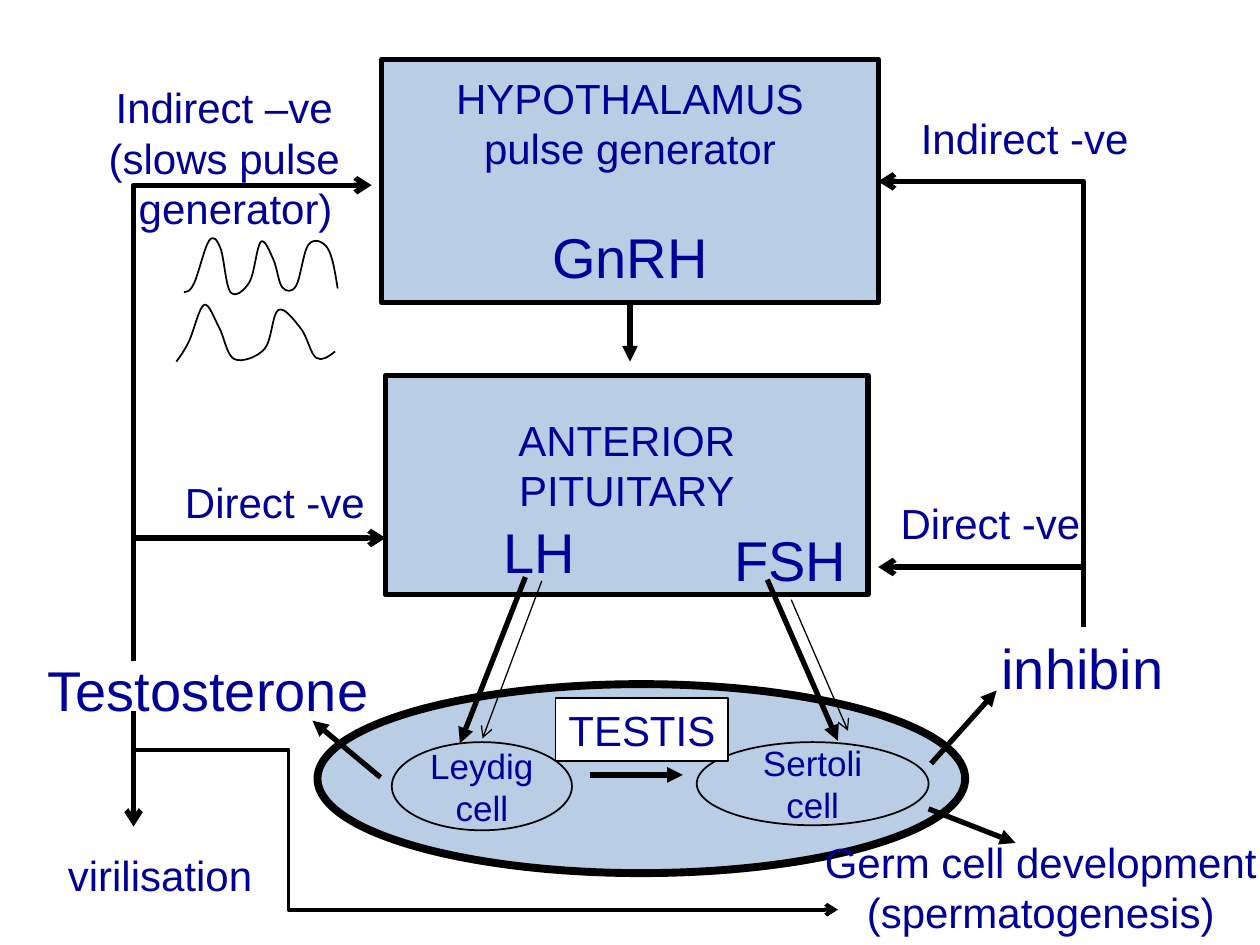
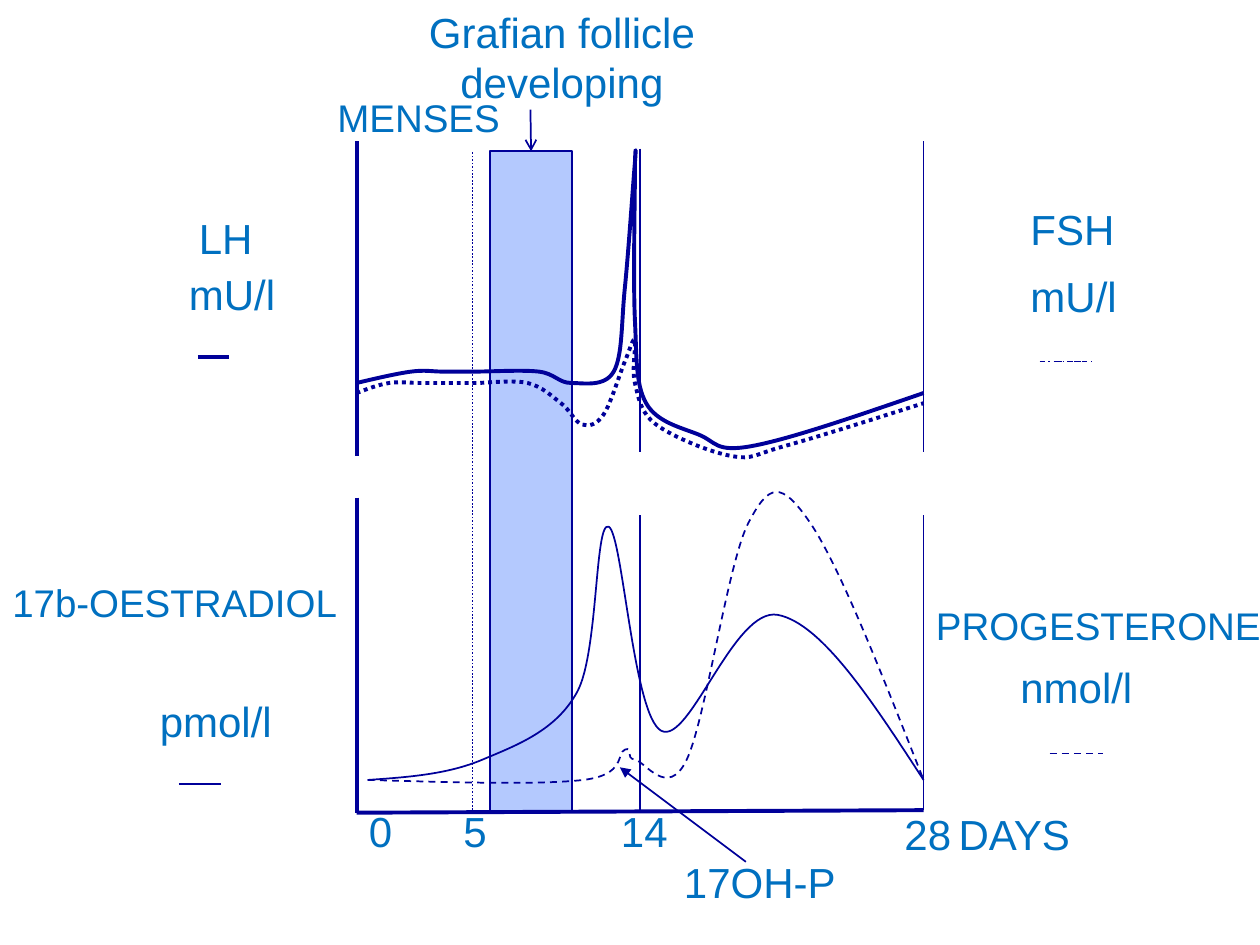
from dataclasses import dataclass
from typing import Optional

from lxml import etree
from pptx import Presentation
from pptx.dml.color import RGBColor
from pptx.enum.dml import MSO_LINE as Dash
from pptx.enum.shapes import MSO_CONNECTOR as Link, MSO_SHAPE as Preset
from pptx.enum.text import MSO_ANCHOR as Anchor, MSO_AUTO_SIZE as AutoSize, PP_ALIGN as Align
from pptx.oxml.ns import qn
from pptx.util import Inches, Pt

Point = tuple[float, float]

COLORS = {
    "organ": "B9CDE5",
    "ink": "000099",
    "caption": "0070C0",
    "outline": "000000",
    "window": "B4C9FE",
    "white": "FFFFFF",
}
FONT = "Arial"
LINE_SPACING = 1.2
TEXT_INSET = 0.05
HEAVY, MEDIUM, THIN, HAIR = 3, 2.25, 1, 0.75


@dataclass
class Label:
    text: str
    left: float
    top: float
    width: float
    size: float = 24
    align: Align = Align.LEFT
    color: str = "ink"


@dataclass
class Block:
    preset: Preset
    left: float
    top: float
    width: float
    height: float
    weight: float
    fill: Optional[str] = None
    text: str = ""
    size: float = 24
    line: str = "outline"


@dataclass
class Stroke:
    start: Point
    end: Point
    weight: float = HEAVY
    tip: Optional[str] = None
    dash: Optional[Dash] = None
    bend: Optional[float] = None
    color: str = "outline"


@dataclass
class Curve:
    """A smooth line that passes through every point."""
    points: list[Point]
    weight: float = THIN
    dash: Optional[Dash] = None
    color: str = "ink"


@dataclass
class CyclePlot:
    """Turns a cycle day and a level above the baseline into a place on the slide."""
    baseline: float
    left: float = 2.83
    width: float = 4.5
    days: int = 28

    def x(self, day: float) -> float:
        return self.left + self.width * day / self.days

    def place(self, levels: list[Point]) -> list[Point]:
        return [(self.x(day), self.baseline - level) for day, level in levels]


def rgb(name: str) -> RGBColor:
    return RGBColor.from_string(COLORS[name])


def style_line(line, color: str, weight: float, dash: Optional[Dash] = None) -> None:
    line.color.rgb = rgb(color)
    line.width = Pt(weight)
    if dash is not None:
        line.dash_style = dash


def write_lines(frame, text: str, size: float, color: str, align: Align) -> None:
    frame.word_wrap = False
    frame.text = text
    for paragraph in frame.paragraphs:
        paragraph.alignment = align
        paragraph.font.name = FONT
        paragraph.font.size = Pt(size)
        paragraph.font.color.rgb = rgb(color)


def add_label(slide, label: Label):
    line_count = label.text.count("\n") + 1
    height = 2 * TEXT_INSET + line_count * label.size * LINE_SPACING / 72
    box = slide.shapes.add_textbox(
        Inches(label.left), Inches(label.top), Inches(label.width), Inches(height))
    write_lines(box.text_frame, label.text, label.size, label.color, label.align)
    box.text_frame.auto_size = AutoSize.SHAPE_TO_FIT_TEXT
    return box


def add_block(slide, block: Block):
    shape = slide.shapes.add_shape(
        block.preset, Inches(block.left), Inches(block.top),
        Inches(block.width), Inches(block.height))
    shape.shadow.inherit = False
    if block.fill:
        shape.fill.solid()
        shape.fill.fore_color.rgb = rgb(block.fill)
    else:
        shape.fill.background()
    style_line(shape.line, block.line, block.weight)
    if block.text:
        write_lines(shape.text_frame, block.text, block.size, "ink", Align.CENTER)
        shape.text_frame.vertical_anchor = Anchor.MIDDLE
    return shape


def add_stroke(slide, stroke: Stroke):
    """Draw a straight line, or an elbow that turns at the share of its width in bend."""
    kind = Link.STRAIGHT if stroke.bend is None else Link.ELBOW
    connector = slide.shapes.add_connector(
        kind, *(Inches(value) for value in stroke.start + stroke.end))
    style_line(connector.line, stroke.color, stroke.weight, stroke.dash)
    properties = connector.element.spPr
    if stroke.tip:
        etree.SubElement(properties.find(qn("a:ln")), qn("a:tailEnd"), type=stroke.tip)
    if stroke.bend is not None:
        guides = next(properties.iter(qn("a:avLst")))
        etree.SubElement(guides, qn("a:gd"), name="adj1",
                         fmla=f"val {round(stroke.bend * 100000)}")
    etree.SubElement(properties, qn("a:effectLst"))
    return connector


def midpoint(a: Point, b: Point) -> Point:
    return (a[0] + b[0]) / 2, (a[1] + b[1]) / 2


def bezier_points(points: list[Point]) -> list[Point]:
    """Put two control points before each later point (a Catmull-Rom spline).

    At an inner point the curve runs parallel to the line between its neighbours.
    """
    arriving, leaving = {}, {}
    for i in range(1, len(points) - 1):
        (x, y), before, after = points[i], points[i - 1], points[i + 1]
        dx, dy = (after[0] - before[0]) / 6, (after[1] - before[1]) / 6
        arriving[i], leaving[i] = (x - dx, y - dy), (x + dx, y + dy)
    last = len(points) - 1
    leaving[0] = midpoint(points[0], arriving[1])
    arriving[last] = midpoint(points[last], leaving[last - 1])

    result = [points[0]]
    for i in range(1, len(points)):
        result += [leaving[i - 1], arriving[i], points[i]]
    return result


def add_curve(slide, curve: Curve):
    """Draw a freeform and turn each three of its straight steps into one Bézier step."""
    start, *rest = [(Inches(x), Inches(y)) for x, y in bezier_points(curve.points)]
    builder = slide.shapes.build_freeform(*start)
    builder.add_line_segments(rest, close=False)
    shape = builder.convert_to_shape()
    shape.shadow.inherit = False
    shape.fill.background()
    style_line(shape.line, curve.color, curve.weight, curve.dash)
    steps = list(shape.element.iter(qn("a:lnTo")))
    outline = steps[0].getparent()
    for first in range(0, len(steps), 3):
        cubic = etree.SubElement(outline, qn("a:cubicBezTo"))
        for step in steps[first:first + 3]:
            cubic.append(step[0])
            outline.remove(step)
    return shape


def add_organs(slide) -> None:
    for block in (
        Block(Preset.OVAL, 2.52, 5.43, 5.14, 1.5, 4.5, "organ"),
        Block(Preset.OVAL, 3.11, 5.89, 1.43, 0.7, THIN, None, "Leydig\ncell", 20),
        Block(Preset.OVAL, 5.53, 5.89, 1.84, 0.66, THIN, None, "Sertoli\ncell", 20),
        Block(Preset.RECTANGLE, 4.41, 5.54, 1.37, 0.5, THIN, "white", "TESTIS"),
    ):
        add_block(slide, block)

    hypothalamus = add_block(slide, Block(
        Preset.RECTANGLE, 3.03, 0.47, 3.94, 1.93, HEAVY, "organ",
        "HYPOTHALAMUS\npulse generator\nGnRH"))
    gnrh = hypothalamus.text_frame.paragraphs[-1]
    gnrh.font.size = Pt(32)
    gnrh.space_before = Pt(28)
    gnrh_release = add_stroke(slide, Stroke((5, 2.4), (5, 2.87), tip="triangle"))
    gnrh_release.begin_connect(hypothalamus, 2)

    pituitary = add_block(slide, Block(
        Preset.RECTANGLE, 3.06, 2.98, 3.83, 1.74, HEAVY, "organ", "ANTERIOR\nPITUITARY"))
    pituitary.text_frame.margin_bottom = Inches(0.37)


def add_hormone_routes(slide) -> None:
    testosterone_x, inhibin_x = 1.06, 8.6
    hypothalamus_right = 6.97
    actions = {
        "Leydig to Sertoli": ((4.68, 6.15), (5.42, 6.15)),
        "LH to Leydig": ((4.17, 4.58), (3.65, 5.9)),
        "FSH to Sertoli": ((6.09, 4.6), (6.65, 5.88)),
        "Leydig to testosterone": ((3.02, 6.17), (2.48, 5.72)),
        "Sertoli to inhibin": ((7.39, 6.06), (7.91, 5.48)),
        "Sertoli to germ cells": ((7.37, 6.42), (8.06, 6.69)),
    }
    for start, end in actions.values():
        add_stroke(slide, Stroke(start, end, tip="triangle"))

    indirect_feedback = [
        Stroke((testosterone_x, 5.25), (2.95, 1.47), bend=0),
        Stroke((inhibin_x, 4.98), (hypothalamus_right, 1.44), bend=0),
    ]
    direct_feedback = [
        Stroke((testosterone_x, 4.27), (3.06, 4.27)),
        Stroke((inhibin_x, 4.5), (hypothalamus_right, 4.5)),
    ]
    testosterone_effects = [
        Stroke((testosterone_x, 5.64), (testosterone_x, 6.56)),
        Stroke((testosterone_x, 5.95), (6.65, 7.22), MEDIUM, bend=0.22),
    ]
    side_arrows = [
        Stroke((4.3, 4.61), (3.83, 5.86), HAIR),
        Stroke((6.28, 4.76), (6.73, 5.8), HAIR),
    ]
    for stroke in indirect_feedback + direct_feedback + testosterone_effects + side_arrows:
        stroke.tip = "arrow"
        add_stroke(slide, stroke)


def build_feedback(slide) -> None:
    add_organs(slide)
    add_hormone_routes(slide)

    for label in (
        Label("Testosterone", 0.28, 5.15, 2.77, 32),
        Label("inhibin", 7.85, 4.98, 1.5, 32),
        Label("LH", 3.9, 4.06, 0.78, 32),
        Label("FSH", 5.73, 4.12, 1.1, 32),
        Label("Direct -ve", 1.37, 3.73, 1.64),
        Label("Direct -ve", 7.05, 3.9, 1.64),
        Label("Indirect -ve", 7.21, 0.84, 1.87),
        Label("virilisation", 0.44, 6.69, 1.67),
        Label("Germ cell development\n(spermatogenesis)", 6.43, 6.59, 3.66,
              align=Align.CENTER),
    ):
        add_label(slide, label)
    slowing = add_label(slide, Label(
        "Indirect –ve\n(slows pulse\ngenerator)", 0.75, 0.6, 2.06, align=Align.CENTER))
    slowing.text_frame.paragraphs[-1]._p.get_or_add_pPr().set("marL", str(Pt(13)))

    fast_pulses = [(1.46, 2.32), (1.54, 2.25), (1.66, 1.91), (1.75, 1.97), (1.83, 2.32),
                   (1.98, 2.24), (2.07, 1.92), (2.17, 2.06), (2.24, 2.28), (2.35, 2.27),
                   (2.45, 1.94), (2.6, 1.97), (2.68, 2.29)]
    slow_pulses = [(1.4, 2.87), (1.5, 2.71), (1.62, 2.42), (1.74, 2.6), (1.86, 2.85),
                   (2.1, 2.77), (2.21, 2.46), (2.39, 2.61), (2.51, 2.84), (2.66, 2.79)]
    for pulses in (fast_pulses, slow_pulses):
        add_curve(slide, Curve(pulses, color="outline"))


def add_hormone_levels(slide, gonadotrophins: CyclePlot, steroids: CyclePlot) -> None:
    """Draw each hormone from (day, level) pairs."""
    lh = [(0, 0.58), (2.7, 0.67), (4.25, 0.67), (5.85, 0.67), (9, 0.67), (10.6, 0.58),
          (12.7, 0.67), (13.25, 1.33), (13.75, 2.33), (13.75, 2.25), (13.75, 1.08),
          (14.3, 0.42), (16.9, 0.17), (19.55, 0.08), (28, 0.5)]
    fsh = [(0, 0.5), (1.6, 0.58), (3.2, 0.58), (4.8, 0.58), (5.85, 0.58), (8.45, 0.58),
           (10.1, 0.42), (11.15, 0.25), (12.2, 0.33), (13.25, 0.75), (13.75, 0.92),
           (13.75, 0.58), (14.8, 0.25), (18.55, 0), (21.15, 0.08), (28, 0.42)]
    oestradiol = [(0.55, 0.24), (6.2, 0.4), (10.9, 0.94), (12.45, 2.25), (15.05, 0.63),
                  (20.8, 1.55), (28, 0.24)]
    progesterone = [(0.55, 0.24), (11.2, 0.24), (13.25, 0.48), (13.75, 0.4), (16.3, 0.4),
                    (19.35, 2.28), (22.4, 2.28), (28, 0.24)]
    for plot, levels, weight, dash in (
        (steroids, progesterone, THIN, Dash.DASH),
        (gonadotrophins, fsh, MEDIUM, Dash.ROUND_DOT),
        (gonadotrophins, lh, MEDIUM, None),
        (steroids, oestradiol, THIN, None),
    ):
        add_curve(slide, Curve(plot.place(levels), weight, dash))


def build_cycle(slide) -> None:
    gonadotrophins, steroids = CyclePlot(baseline=3.62), CyclePlot(baseline=6.43)
    start, ovulation, end = (steroids.x(day) for day in (0, 14, 28))
    menses_end = 3.75

    follicle_window = add_block(slide, Block(
        Preset.RECTANGLE, 3.89, 1.2, 0.65, 5.24, THIN, "window", line="ink"))
    follicle_arrow = add_stroke(slide, Stroke(
        (4.21, 0.87), (4.21, 1.2), THIN, "arrow", color="ink"))
    follicle_arrow.end_connect(follicle_window, 0)

    strokes = [
        Stroke((start, 6.45), (end, steroids.baseline), MEDIUM),
        Stroke((menses_end, steroids.baseline), (menses_end, 1.2), THIN, dash=Dash.ROUND_DOT),
        Stroke((5.92, 6.84), (4.92, 6.09), THIN, "triangle"),
    ]
    for x, weight, *spans in (
        (start, MEDIUM, (1.12, 3.62), (3.95, 6.45)),
        (ovulation, THIN, (1.18, 3.59), (4.09, 6.43)),
        (end, THIN, (1.12, 3.59), (4.09, 6.43)),
    ):
        strokes += [Stroke((x, top), (x, bottom), weight) for top, bottom in spans]
    for left, right, y, weight, dash in (
        (1.57, 1.82, 2.83, MEDIUM, None),
        (1.42, 1.75, 6.22, THIN, None),
        (8.58, 8.25, 2.87, THIN, Dash.DASH_DOT),
        (8.25, 8.67, 2.87, HAIR, Dash.DASH_DOT),
        (8.33, 8.75, 5.98, THIN, Dash.DASH),
    ):
        strokes.append(Stroke((left, y), (right, y), weight, dash=dash))
    for stroke in strokes:
        stroke.color = "ink"
        add_stroke(slide, stroke)

    add_hormone_levels(slide, gonadotrophins, steroids)

    for label in (
        Label("0", 2.83, 6.34, 0.39),
        Label("5", 3.58, 6.34, 0.39),
        Label("14", 4.83, 6.34, 0.58),
        Label("28", 7.08, 6.37, 0.58),
        Label("DAYS", 7.51, 6.37, 1.1),
        Label("MENSES", 2.58, 0.7, 1.5, 22),
        Label("LH", 1.48, 1.64, 0.65),
        Label("mU/l", 1.4, 2.08, 0.89),
        Label("FSH", 8.08, 1.57, 0.87),
        Label("mU/l", 8.08, 2.1, 0.89),
        Label("17b-OESTRADIOL", 0, 4.55, 2.94, 22),
        Label("pmol/l", 1.17, 5.47, 1.1),
        Label("PROGESTERONE", 7.33, 4.73, 2.81, 22),
        Label("nmol/l", 8, 5.2, 1.1),
        Label("17OH-P", 5.33, 6.75, 1.42),
        Label("Grafian follicle\ndeveloping", 3.29, 0, 2.34, align=Align.CENTER),
    ):
        label.color = "caption"
        add_label(slide, label)


def main() -> None:
    deck = Presentation()
    deck.slide_width, deck.slide_height = Inches(10), Inches(7.5)
    blank = deck.slide_layouts.get_by_name("Blank")
    for build in (build_feedback, build_cycle):
        build(deck.slides.add_slide(blank))
    deck.save("out.pptx")


if __name__ == "__main__":
    main()
